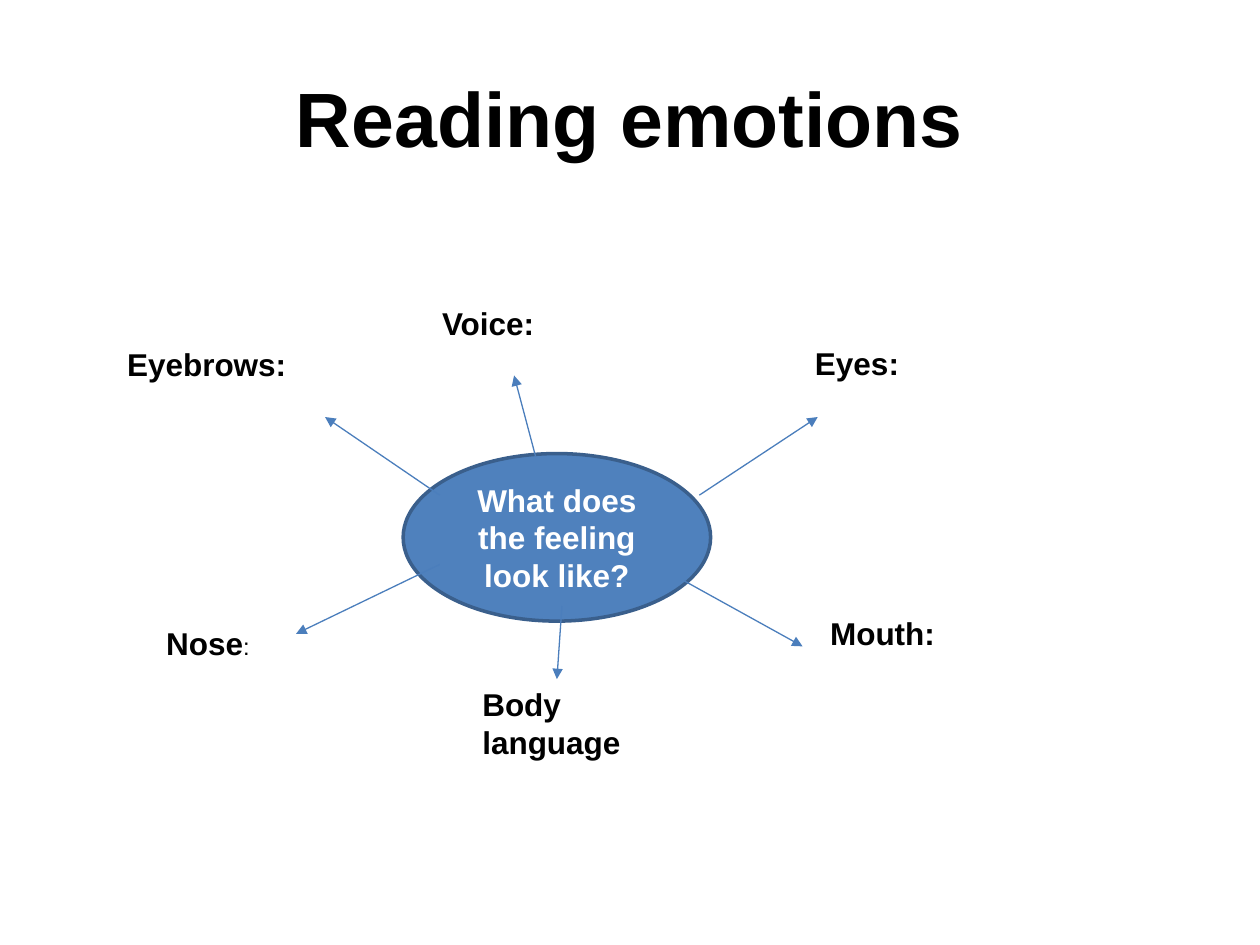
import pptx
import pptx.dml.color
import pptx.enum.shapes
import pptx.enum.text
import pptx.oxml
import pptx.oxml.ns
import pptx.util

# The slide is a grid of 100 columns by 75 rows
COLUMNS, ROWS = 100, 75
WIDTH, HEIGHT = pptx.util.Inches(10), pptx.util.Inches(7.5)
FONT = "Arial"
BLACK, WHITE = "000000", "FFFFFF"
FILL, OUTLINE, ARROW = "4F81BD", "3A5F8C", "4B7EBC"
CENTER = pptx.enum.text.PP_ALIGN.CENTER
LEFT = pptx.enum.text.PP_ALIGN.LEFT
TOP = pptx.enum.text.MSO_ANCHOR.TOP
MIDDLE = pptx.enum.text.MSO_ANCHOR.MIDDLE

# Text and box: column, row, columns wide, rows high
LABELS = [
    ("Eyes:", (63.7, 26.8, 13.7, 10.9)),
    ("Mouth:", (64.9, 48.2, 13.7, 10.9)),
    ("Nose", (12.2, 49, 13.7, 10.9)),
    ("Eyebrows:", (9.1, 26.9, 15.9, 10.9)),
    ("Voice:", (34.1, 23.6, 13.5, 10.9)),
    ("Body language", (37.3, 53.9, 13.7, 13.9)),
]
# Start column and row, end column and row
ARROWS = [
    (55.5, 39.3, 64.9, 33.1),
    (54.3, 46.1, 63.7, 51.3),
    (34.9, 44.8, 23.5, 50.3),
    (34.9, 39.3, 25.8, 33.1),
    (42.5, 36.2, 40.8, 29.8),
    (44.6, 48.1, 44.2, 53.9),
]


def color(value):
    return pptx.dml.color.RGBColor.from_string(value)


def place(box):
    """Turn column and row pairs into slide lengths."""
    column, row, across, down = box
    return (round(WIDTH * column / COLUMNS), round(HEIGHT * row / ROWS),
            round(WIDTH * across / COLUMNS), round(HEIGHT * down / ROWS))


def format_run(run, size, value, bold=True):
    run.font.name = FONT
    run.font.size = pptx.util.Pt(size)
    run.font.bold = bold
    run.font.color.rgb = color(value)


def set_text(shape, text, size, value=BLACK, align=LEFT, anchor=TOP):
    frame = shape.text_frame
    frame.word_wrap = True
    frame.vertical_anchor = anchor
    frame.text = text
    paragraph = frame.paragraphs[0]
    paragraph.alignment = align
    format_run(paragraph.runs[0], size, value)
    return paragraph


def add_text(slide, box, text, size, **options):
    shape = slide.shapes.add_textbox(*place(box))
    return set_text(shape, text, size, **options)


def add_ellipse(slide, box, text):
    shape = slide.shapes.add_shape(
        pptx.enum.shapes.MSO_SHAPE.OVAL, *place(box))
    shape.shadow.inherit = False
    shape.fill.solid()
    shape.fill.fore_color.rgb = color(FILL)
    shape.line.color.rgb = color(OUTLINE)
    shape.line.width = pptx.util.Pt(2)
    set_text(shape, text, 18, value=WHITE, align=CENTER, anchor=MIDDLE)


def add_arrow(slide, ends):
    connector = slide.shapes.add_connector(
        pptx.enum.shapes.MSO_CONNECTOR.STRAIGHT, *place(ends))
    connector.line.color.rgb = color(ARROW)
    connector.line.width = pptx.util.Pt(0.75)
    properties = connector._element.spPr
    line = properties.find(pptx.oxml.ns.qn("a:ln"))
    head = pptx.oxml.parse_xml(
        f'<a:tailEnd {pptx.oxml.ns.nsdecls("a")} type="triangle"/>')
    line.append(head)
    properties.append(pptx.oxml.parse_xml(
        f'<a:effectLst {pptx.oxml.ns.nsdecls("a")}/>'))


def main():
    presentation = pptx.Presentation()
    presentation.slide_width, presentation.slide_height = WIDTH, HEIGHT
    slide = presentation.slides.add_slide(presentation.slide_layouts[6])

    # Title
    add_text(slide, (5, 3, 90, 12.5), "Reading emotions", 44,
             align=CENTER, anchor=MIDDLE)

    # Central question and the arrows leading out of it
    add_ellipse(slide, (32, 36, 24.4, 13.3), "What does the feeling look like?")
    for ends in ARROWS:
        add_arrow(slide, ends)

    # Labels around the question
    for text, box in LABELS:
        paragraph = add_text(slide, box, text, 18)
        if text == "Nose":
            # This label's colon is smaller and not bold
            colon = paragraph.add_run()
            colon.text = ":"
            format_run(colon, 13.5, BLACK, bold=False)

    presentation.save("out.pptx")


if __name__ == "__main__":
    main()
